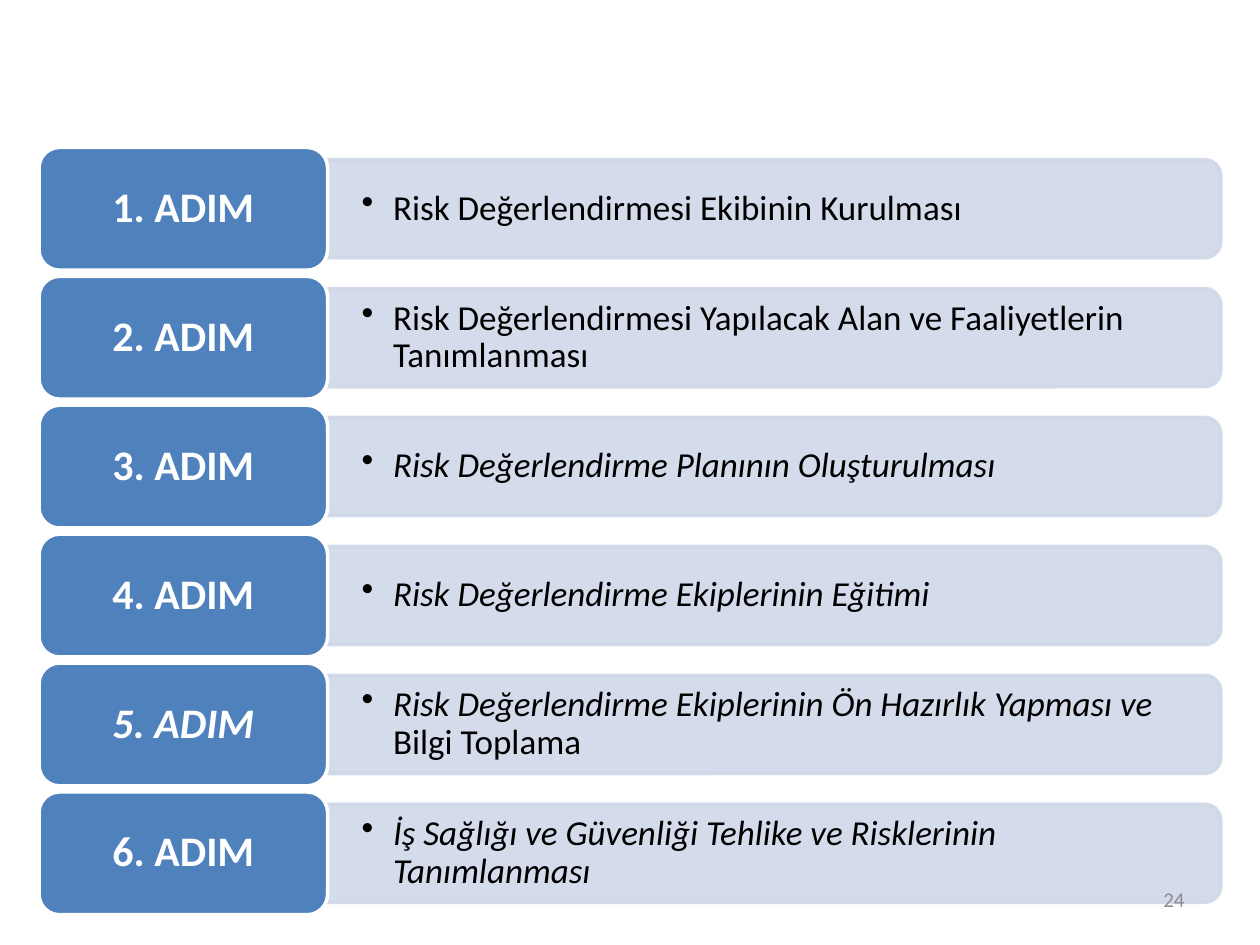
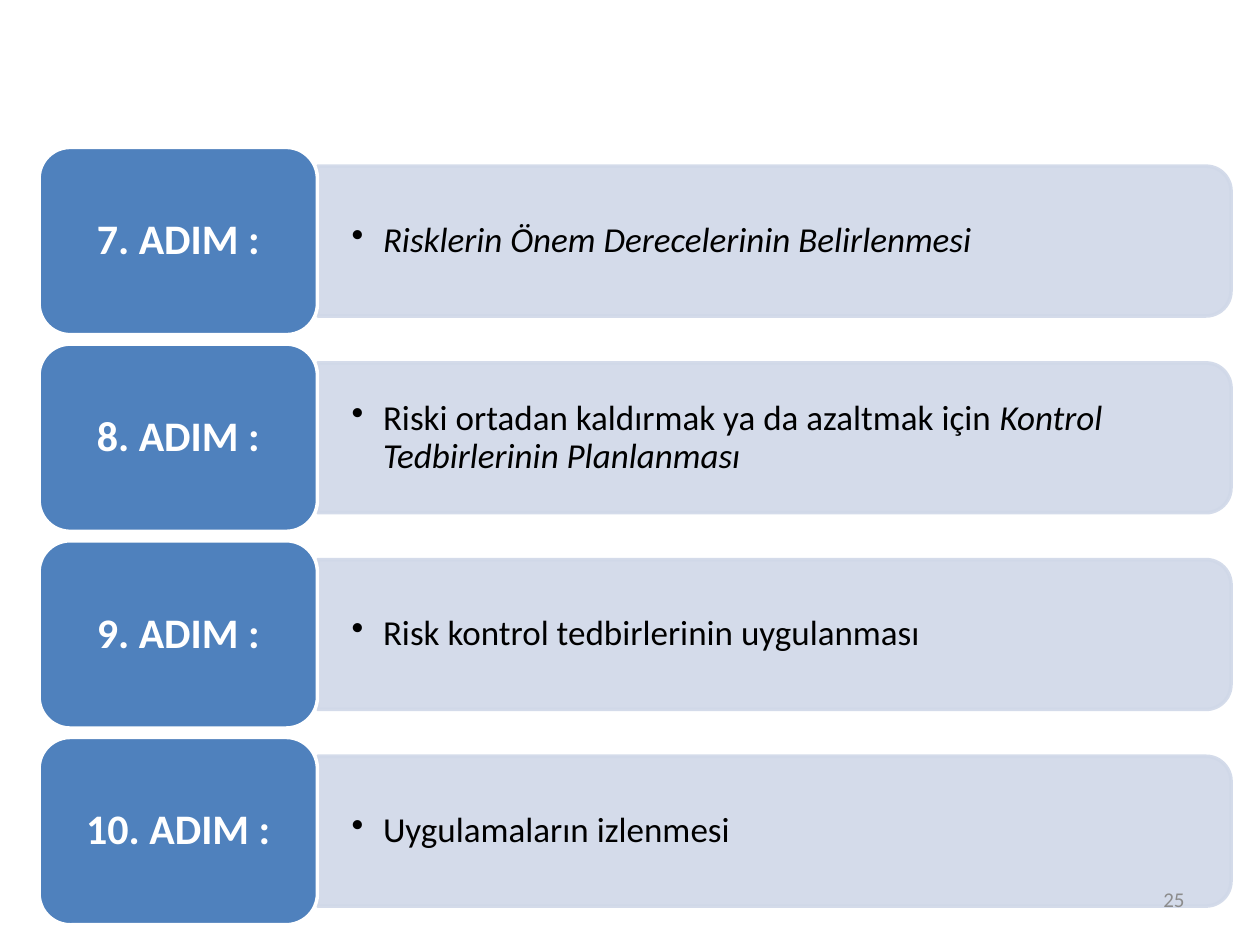
from dataclasses import dataclass

from lxml.etree import SubElement
from pptx import Presentation
from pptx.dml.color import RGBColor
from pptx.enum.shapes import MSO_SHAPE
from pptx.enum.text import MSO_ANCHOR, PP_ALIGN
from pptx.oxml.ns import qn
from pptx.util import Inches, Pt

COLORS = {
    "label": "4F81BD",
    "bar": "D0D8E8",
    "white": "FFFFFF",
    "text": "000000",
    "number": "8C8C8C",
}
FONT = "Calibri"
ROW_GAP = 0.05      # share of a row's height
BAR_SHARE = 0.8     # bar height as a share of the row's height
CORNER_INSET = 0.05  # share of the bar's height kept clear of its corners


@dataclass
class Box:
    left: float
    top: float
    width: float
    height: float

    def emu(self):
        return [Inches(n) for n in (self.left, self.top, self.width, self.height)]

    def turned(self):
        """The box that covers this one after a quarter turn."""
        return Box(self.left + (self.width - self.height) / 2,
                   self.top + (self.height - self.width) / 2,
                   self.height, self.width)


NUMBER_BOX = Box(7.17, 6.95, 2.33, 0.4)


def color(name):
    return RGBColor.from_string(COLORS[name])


def add_block(page, kind, box, fill, line):
    block = page.shapes.add_shape(kind, *box.emu())
    block.shadow.inherit = False
    block.fill.solid()
    block.fill.fore_color.rgb = color(fill)
    block.line.color.rgb = color(line)
    block.line.width = Pt(2)
    return block


def write(shape, spans, size, name, align=PP_ALIGN.LEFT, bold=False):
    """Fill a shape with one paragraph of (text, italic) spans."""
    frame = shape.text_frame
    frame.word_wrap = True
    frame.vertical_anchor = MSO_ANCHOR.MIDDLE
    para = frame.paragraphs[0]
    para.alignment = align
    para.line_spacing = 0.9
    para.font.name = FONT
    para.font.size = Pt(size)
    para.font.bold = bold
    para.font.color.rgb = color(name)
    for text, italic in spans:
        span = para.add_run()
        span.text = text
        span.font.name = FONT
        span.font.size = Pt(size)
        span.font.bold = bold
        span.font.italic = italic
        span.font.color.rgb = color(name)
    return para


def add_bullet(para):
    props = para._p.get_or_add_pPr()
    props.set("marL", str(Inches(0.25)))
    props.set("indent", str(-Inches(0.25)))
    bullet = props.makeelement(qn("a:buChar"), {"char": "•"})
    props.insert_element_before(bullet, "a:tabLst", "a:defRPr", "a:extLst")


def add_bar(page, box):
    bar = add_block(page, MSO_SHAPE.ROUND_2_SAME_RECTANGLE, box.turned(), "bar", "bar")
    bar.rotation = 90
    for tint in bar._element.spPr.iter(qn("a:srgbClr")):
        SubElement(tint, qn("a:alpha"), val="90000")


def add_detail(page, box, spans):
    inset = CORNER_INSET * box.height
    area = Box(box.left, box.top + inset, box.width - inset, box.height - 2 * inset)
    detail = page.shapes.add_textbox(*area.emu())
    frame = detail.text_frame
    frame.margin_left = frame.margin_right = Inches(0.27)
    frame.margin_top = frame.margin_bottom = Inches(0.14)
    add_bullet(write(detail, spans, 20, "text"))


def add_step(page, row, label_width, label, spans):
    bar_height = BAR_SHARE * row.height
    bar = Box(row.left + label_width, row.top + (row.height - bar_height) / 2,
              row.width - label_width, bar_height)
    add_bar(page, bar)
    add_detail(page, bar, spans)
    tile = add_block(page, MSO_SHAPE.ROUNDED_RECTANGLE,
                     Box(row.left, row.top, label_width, row.height),
                     "label", "white")
    write(tile, [label], 24, "white", PP_ALIGN.CENTER, bold=True)


def add_step_page(deck, number, box, label_width, steps):
    page = deck.slides.add_slide(deck.slide_layouts[6])
    height = box.height / (len(steps) + ROW_GAP * (len(steps) - 1))
    for index, (label, spans) in enumerate(steps):
        top = box.top + index * height * (1 + ROW_GAP)
        add_step(page, Box(box.left, top, box.width, height), label_width, label, spans)
    number_box = page.shapes.add_textbox(*NUMBER_BOX.emu())
    write(number_box, [(str(number), False)], 12, "number", PP_ALIGN.RIGHT)


FIRST_STEPS = [
    (("1. ADIM", False), [("Risk Değerlendirmesi Ekibinin Kurulması", False)]),
    (("2. ADIM", False),
     [("Risk Değerlendirmesi Yapılacak Alan ve Faaliyetlerin Tanımlanması", False)]),
    (("3. ADIM", False), [("Risk Değerlendirme Planının Oluşturulması", True)]),
    (("4. ADIM", False), [("Risk Değerlendirme Ekiplerinin Eğitimi", True)]),
    (("5. ADIM", True),
     [("Risk Değerlendirme Ekiplerinin Ön Hazırlık Yapması ve ", True),
      ("Bilgi Toplama", False)]),
    (("6. ADIM", False),
     [("İş Sağlığı ve Güvenliği Tehlike ve Risklerinin Tanımlanması", True)]),
]
LAST_STEPS = [
    (("7. ADIM :", False), [("Risklerin Önem Derecelerinin Belirlenmesi", True)]),
    (("8. ADIM :", False),
     [("Riski ortadan kaldırmak ya da azaltmak için ", False),
      ("Kontrol Tedbirlerinin Planlanması", True)]),
    (("9. ADIM :", False), [("Risk kontrol tedbirlerinin uygulanması", False)]),
    (("10. ADIM :", False), [("Uygulamaların izlenmesi", False)]),
]


def main():
    deck = Presentation()
    deck.slide_width, deck.slide_height = Inches(10), Inches(7.5)
    add_step_page(deck, 24, Box(0.31, 1.17, 9.38, 6.09), 2.29, FIRST_STEPS)
    add_step_page(deck, 25, Box(0.31, 1.17, 9.46, 6.17), 2.21, LAST_STEPS)
    deck.save("out.pptx")


if __name__ == "__main__":
    main()
